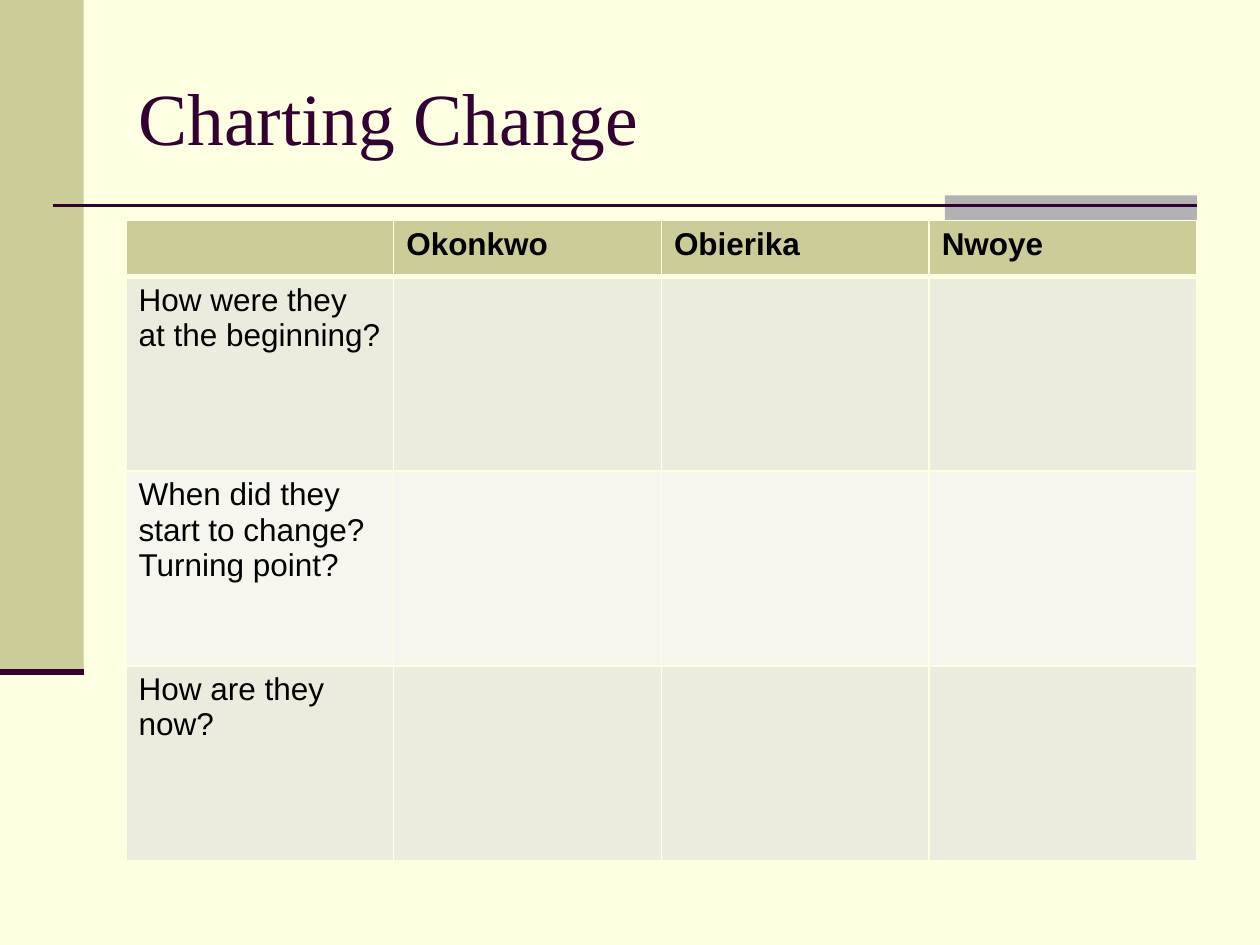
from lxml.etree import SubElement
from pptx import Presentation
from pptx.dml.color import RGBColor
from pptx.enum.shapes import MSO_CONNECTOR as Connector, MSO_SHAPE as Shape
from pptx.enum.text import MSO_ANCHOR as Anchor
from pptx.oxml.ns import qn
from pptx.util import Cm, Pt

CREAM = RGBColor(0xFF, 0xFF, 0xE1)
KHAKI = RGBColor(0xCC, 0xCC, 0x99)
GREY = RGBColor(0xB2, 0xB2, 0xB2)
PLUM = RGBColor(0x33, 0x00, 0x33)
BLACK = RGBColor(0x00, 0x00, 0x00)
DARK_BAND = RGBColor(0xEC, 0xEC, 0xDE)
LIGHT_BAND = RGBColor(0xF6, 0xF6, 0xEF)

CHARACTERS = ["", "Okonkwo", "Obierika", "Nwoye"]
QUESTIONS = [
    "How were they at the beginning?",
    "When did they start to change? Turning point?",
    "How are they now?",
]


def add_block(slide, left, top, width, height, color):
    """Draw a plain filled rectangle."""
    block = slide.shapes.add_shape(Shape.RECTANGLE, Cm(left), Cm(top), Cm(width), Cm(height))
    block.shadow.inherit = False
    block.fill.solid()
    block.fill.fore_color.rgb = color
    block.line.fill.background()


def add_rule(slide, left, top, width, weight):
    """Draw a horizontal plum line."""
    rule = slide.shapes.add_connector(Connector.STRAIGHT, Cm(left), Cm(top), Cm(left + width), Cm(top))
    rule.line.color.rgb = PLUM
    rule.line.width = Pt(weight)
    SubElement(rule._element.spPr, qn("a:effectLst"))


def add_run(paragraph, text, font, size, color, bold=False):
    """Append one formatted run."""
    run = paragraph.add_run()
    run.text = text
    run.font.name = font
    run.font.size = Pt(size)
    run.font.color.rgb = color
    run.font.bold = bold


def set_borders(cell, bottom_weight):
    """Give a cell cream borders, placed before its fill."""
    properties = cell._tc.get_or_add_tcPr()
    sides = [("a:lnL", 1), ("a:lnR", 1), ("a:lnT", 1), ("a:lnB", bottom_weight)]
    for position, (side, weight) in enumerate(sides):
        border = SubElement(properties, qn(side), w=str(Pt(weight)))
        fill = SubElement(border, qn("a:solidFill"))
        SubElement(fill, qn("a:srgbClr"), val=str(CREAM))
        properties.insert(position, border)


def add_sidebar(slide, left, top, width, height):
    """Draw the khaki sidebar and the rule at its foot."""
    add_block(slide, left, top, width, height, KHAKI)
    add_rule(slide, left, top + height, width, 3.5)


def add_heading(slide, left, top, width, height):
    """Place the title with its underline and grey accent."""
    right, accent_width = left + width, 5.08
    add_block(slide, right - accent_width, top + height, accent_width, 0.5, GREY)
    rule_left = left - 1.48
    add_rule(slide, rule_left, top + height + 0.2, right - rule_left, 1.5)
    title = slide.shapes.add_textbox(Cm(left), Cm(top), Cm(width), Cm(height)).text_frame
    title.word_wrap = True
    title.vertical_anchor = Anchor.MIDDLE
    add_run(title.paragraphs[0], "Charting Change", "Times New Roman", 42, PLUM)


def add_change_table(slide, left, top, width, height):
    """Build the grid of questions against characters."""
    rows = [CHARACTERS] + [[question, "", "", ""] for question in QUESTIONS]
    header_height = 1.12
    table = slide.shapes.add_table(
        len(rows), len(CHARACTERS), Cm(left), Cm(top), Cm(width), Cm(height)
    ).table
    for column in table.columns:
        column.width = Cm(width / len(CHARACTERS))
    for r, texts in enumerate(rows):
        is_header = r == 0
        table.rows[r].height = Cm(header_height if is_header else (height - header_height) / len(QUESTIONS))
        band = KHAKI if is_header else (DARK_BAND if r % 2 else LIGHT_BAND)
        for c, text in enumerate(texts):
            cell = table.cell(r, c)
            cell.fill.solid()
            cell.fill.fore_color.rgb = band
            set_borders(cell, 3 if is_header else 1)
            if text:
                add_run(cell.text_frame.paragraphs[0], text, "Arial", 18, BLACK, is_header)


def main():
    """Build and save the slide."""
    deck = Presentation()
    deck.slide_width, deck.slide_height = Cm(25.4), Cm(19.05)
    slide = deck.slides.add_slide(deck.slide_layouts[6])
    slide.background.fill.solid()
    slide.background.fill.fore_color.rgb = CREAM
    add_sidebar(slide, 0, 0, 1.69, 13.55)
    add_heading(slide, 2.54, 0.76, 21.59, 3.18)
    add_change_table(slide, 2.54, 4.45, 21.59, 12.9)
    deck.save("out.pptx")


if __name__ == "__main__":
    main()
